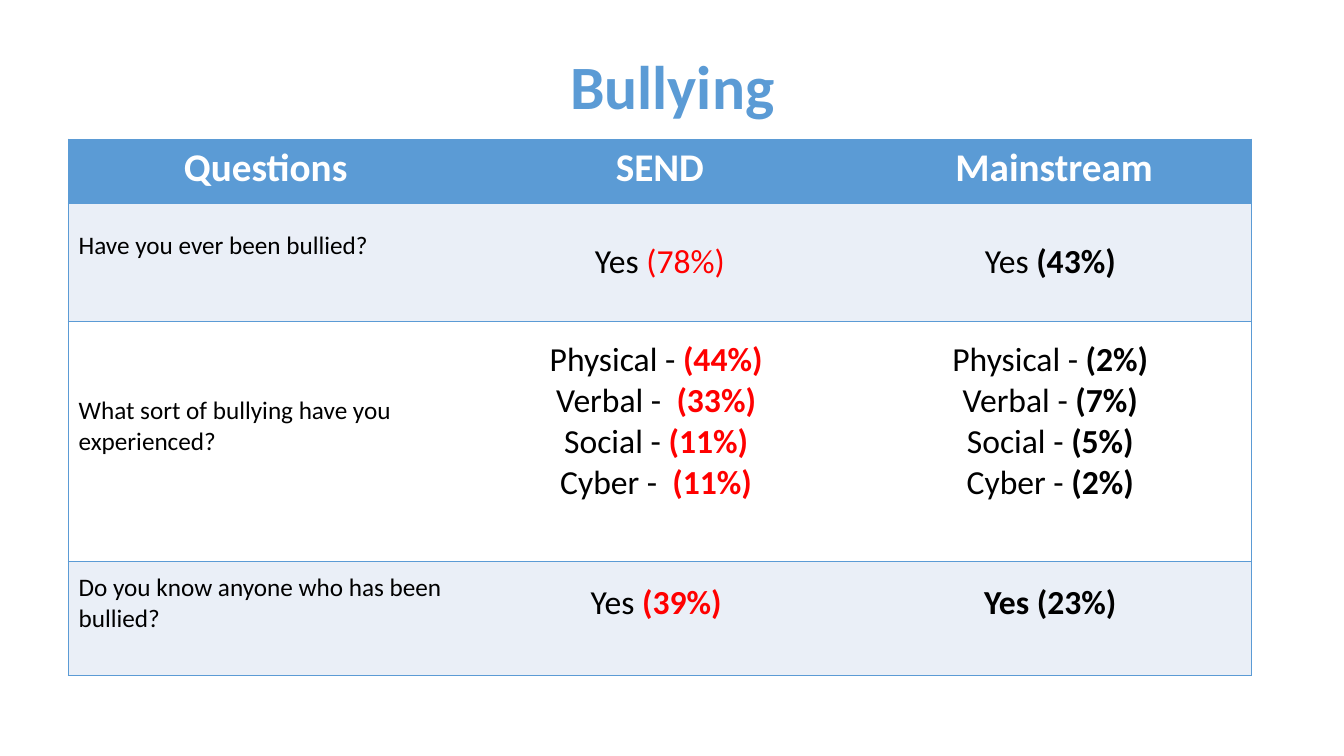
"""Build the slide that compares bullying answers from SEND and mainstream pupils."""
from lxml.etree import SubElement
from pptx import Presentation
from pptx.dml.color import RGBColor
from pptx.enum.text import MSO_ANCHOR, PP_ALIGN
from pptx.oxml.ns import qn
from pptx.util import Inches, Pt

BLUE, PALE, WHITE, BLACK, RED = "5B9BD5", "EAEFF7", "FFFFFF", "000000", "FF0000"


def style(span, size, color, bold):
    span.font.name = "Calibri"
    span.font.size = Pt(size)
    span.font.bold = bold
    span.font.color.rgb = RGBColor.from_string(color)


def draw_borders(cell, visible_sides):
    properties = cell._tc.get_or_add_tcPr()
    for side in "LRTB":
        line = SubElement(properties, qn(f"a:ln{side}"), w=str(Pt(1)))
        if side in visible_sides:
            fill = SubElement(line, qn("a:solidFill"))
            SubElement(fill, qn("a:srgbClr"), val=BLUE)
        else:
            SubElement(line, qn("a:noFill"))


deck = Presentation()
deck.slide_width, deck.slide_height = Inches(13.33), Inches(7.5)
page = deck.slides.add_slide(deck.slide_layouts[6])

title = page.shapes.add_textbox(Inches(0.92), Inches(0.4), Inches(11.5), Inches(0.98))
title.text_frame.word_wrap = True
title.text_frame.vertical_anchor = MSO_ANCHOR.MIDDLE
title.text_frame.text = "Bullying"
para = title.text_frame.paragraphs[0]
para.alignment = PP_ALIGN.CENTER
para.line_spacing = 0.9
style(para.runs[0], 44, BLUE, True)

# Each answer line is (label, figure, label is bold, figure is bold).
headings = ["Questions", "SEND", "Mainstream"]
kinds = ["Physical - ", "Verbal - ", "Social - ", "Cyber - "]
send_kinds = ["Physical - ", "Verbal -  ", "Social - ", "Cyber -  "]
answers = [
    ("Have you ever been bullied?",
     [("Yes ", "(78%)", False, False)],
     [("Yes ", "(43%) ", False, True)]),
    ("What sort of bullying have you experienced?",
     [(kind, f"({share}%) ", False, True) for kind, share in zip(send_kinds, [44, 33, 11, 11])],
     [(kind, f"({share}%) ", False, True) for kind, share in zip(kinds, [2, 7, 5, 2])]),
    ("Do you know anyone who has been bullied?",
     [("Yes", " (39%) ", False, True)],
     [("Yes ", "(23%) ", True, True)]),
]
row_heights = [0.64, 1.17, 2.38, 1.13]
bottom_margins = [(0.39, 0.05, 0.05), (0.35, 0.45, 0.45), (0.35, 0.35, 0.35)]

table = page.shapes.add_table(4, 3, Inches(0.68), Inches(1.38),
                              Inches(11.73), Inches(sum(row_heights))).table
table.first_row = table.horz_banding = False
for column in table.columns:
    column.width = Inches(3.91)
for row, height in zip(table.rows, row_heights):
    row.height = Inches(height)

for column, heading in enumerate(headings):
    cell = table.cell(0, column)
    cell.text_frame.text = heading
    para = cell.text_frame.paragraphs[0]
    para.alignment = PP_ALIGN.CENTER
    style(para.runs[0], 28, WHITE, True)

for row, (question, *groups) in enumerate(answers, start=1):
    for column, margin in enumerate(bottom_margins[row - 1]):
        cell = table.cell(row, column)
        cell.vertical_anchor = MSO_ANCHOR.MIDDLE
        cell.margin_bottom = Inches(margin)
    frame = table.cell(row, 0).text_frame
    frame.text = question
    style(frame.paragraphs[0].runs[0], 18, BLACK, False)
    for column, (lines, figure_color) in enumerate(zip(groups, [RED, BLACK]), start=1):
        frame = table.cell(row, column).text_frame
        frame.text = "\n".join(label for label, *rest in lines)
        for para, (label, figure, label_bold, figure_bold) in zip(frame.paragraphs, lines):
            para.alignment = PP_ALIGN.CENTER
            style(para.runs[0], 24, BLACK, label_bold)
            span = para.add_run()
            span.text = figure
            style(span, 24, figure_color, figure_bold)

for row, color in enumerate([BLUE, PALE, WHITE, PALE]):
    for column, outer_side in enumerate(["L", "", "R"]):
        cell = table.cell(row, column)
        draw_borders(cell, "TB" + outer_side)
        cell.fill.solid()
        cell.fill.fore_color.rgb = RGBColor.from_string(color)

deck.save("out.pptx")
